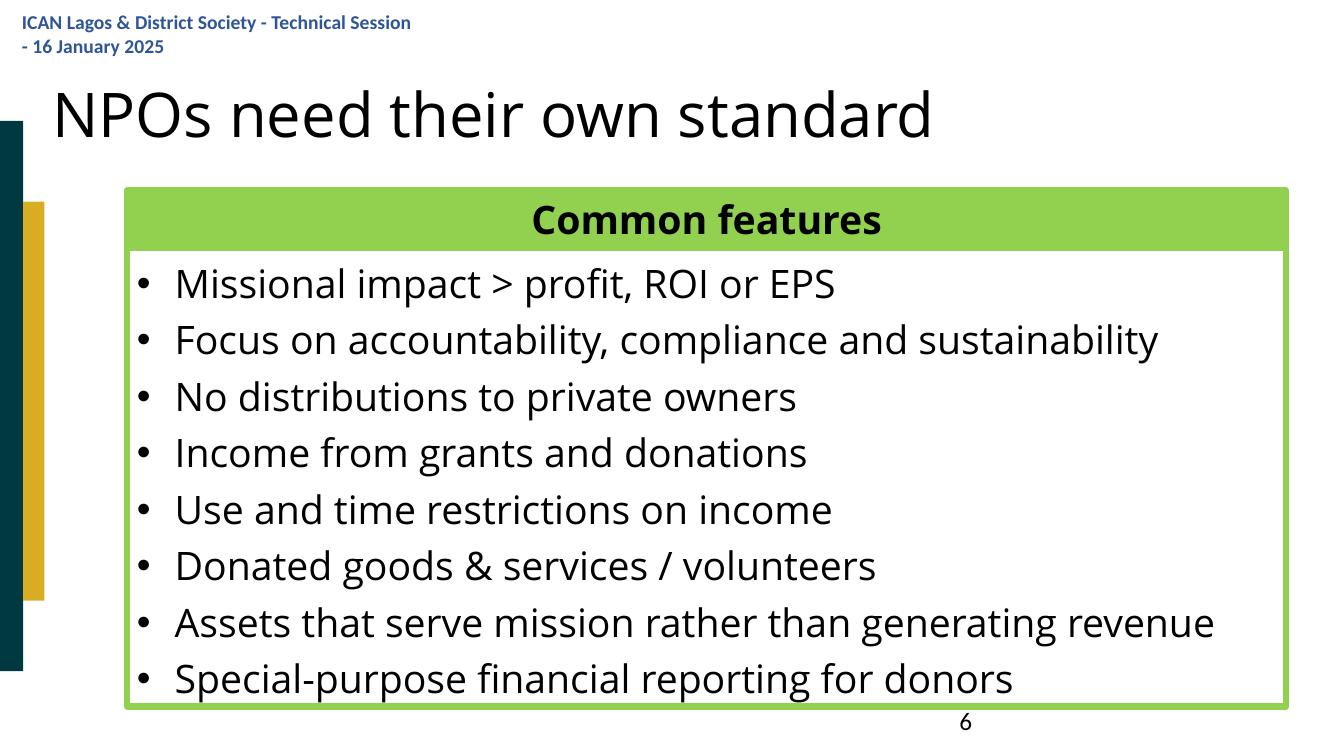
from lxml import etree
from pptx import Presentation
from pptx.dml.color import RGBColor
from pptx.enum import shapes, text
from pptx.oxml.ns import qn
from pptx.util import Pt

# Content
EVENT = "ICAN Lagos & District Society - Technical Session - 16 January 2025"
TITLE = "NPOs need their own standard"
HEAD = "Common features"
ITEMS = [
    "Missional impact > profit, ROI or EPS",
    "Focus on accountability, compliance and sustainability",
    "No distributions to private owners",
    "Income from grants and donations",
    "Use and time restrictions on income",
    "Donated goods & services / volunteers",
    "Assets that serve mission rather than generating revenue",
    "Special-purpose financial reporting for donors",
]
PAGE = "6"

# Colours and fonts
BLACK = RGBColor(0x00, 0x00, 0x00)
BLUE = RGBColor(0x2F, 0x55, 0x97)
TEAL = RGBColor(0x00, 0x3A, 0x40)
GOLD = RGBColor(0xD8, 0xAD, 0x24)
GREEN = RGBColor(0x92, 0xD0, 0x50)
SANS, PLAIN = "Open Sans", "Calibri"

# Panel geometry, in points
LEFT, WIDTH = 90.72, 828
INDENT = 27

deck = Presentation()
deck.slide_width, deck.slide_height = Pt(960), Pt(540)
slide = deck.slides.add_slide(deck.slide_layouts[5])


def write(shape, lines, size=28, font=SANS, color=BLACK, bold=False,
          align=text.PP_ALIGN.LEFT, anchor=text.MSO_ANCHOR.TOP,
          spacing=None, bullet=False):
    frame = shape.text_frame
    frame.word_wrap = True
    frame.auto_size = text.MSO_AUTO_SIZE.NONE
    frame.vertical_anchor = anchor
    frame.text = "\n".join(lines)
    for para in frame.paragraphs:
        if bullet:
            props = para._p.get_or_add_pPr()
            props.set("marL", str(Pt(INDENT)))
            props.set("indent", str(-Pt(INDENT)))
            etree.SubElement(props, qn("a:buFont"), typeface="Arial")
            etree.SubElement(props, qn("a:buChar"), char="•")
        para.alignment = align
        para.line_spacing = spacing
        for run in para.runs:
            run.font.name, run.font.size = font, Pt(size)
            run.font.bold, run.font.color.rgb = bold, color


def block(x, y, w, h, fill=None, line=None):
    shape = slide.shapes.add_shape(
        shapes.MSO_SHAPE.RECTANGLE, Pt(x), Pt(y), Pt(w), Pt(h))
    shape.shadow.inherit = False
    if fill is None:
        shape.fill.background()
    else:
        shape.fill.solid()
        shape.fill.fore_color.rgb = fill
    if line is None:
        shape.line.fill.background()
    else:
        shape.line.color.rgb, shape.line.width = line, Pt(4.5)
    return shape


def label(x, y, w, h):
    return slide.shapes.add_textbox(Pt(x), Pt(y), Pt(w), Pt(h))


# Side bars
block(0, 86.4, 16.56, 393.12, fill=TEAL)
block(16.56, 144, 15.12, 285.12, fill=GOLD)

# Event line and title
write(label(8.64, 3.6, 295.2, 28.8), [EVENT], size=14, font=PLAIN,
      color=BLUE, bold=True)
title = slide.shapes.title
title.left, title.top = Pt(30.24), Pt(31.68)
title.width, title.height = Pt(828), Pt(104.4)
write(title, [TITLE], size=44, anchor=text.MSO_ANCHOR.MIDDLE, spacing=0.9)

# Page number
write(label(678.24, 500.4, 216, 28.8), [PAGE], size=18, font=PLAIN)

# Features panel
write(block(LEFT, 136.08, WIDTH, 41.04, fill=GREEN, line=GREEN), [HEAD],
      bold=True, align=text.PP_ALIGN.CENTER)
write(block(LEFT, 174.96, WIDTH, 329.76, line=GREEN), ITEMS,
      spacing=1.2, bullet=True)

deck.save("out.pptx")
